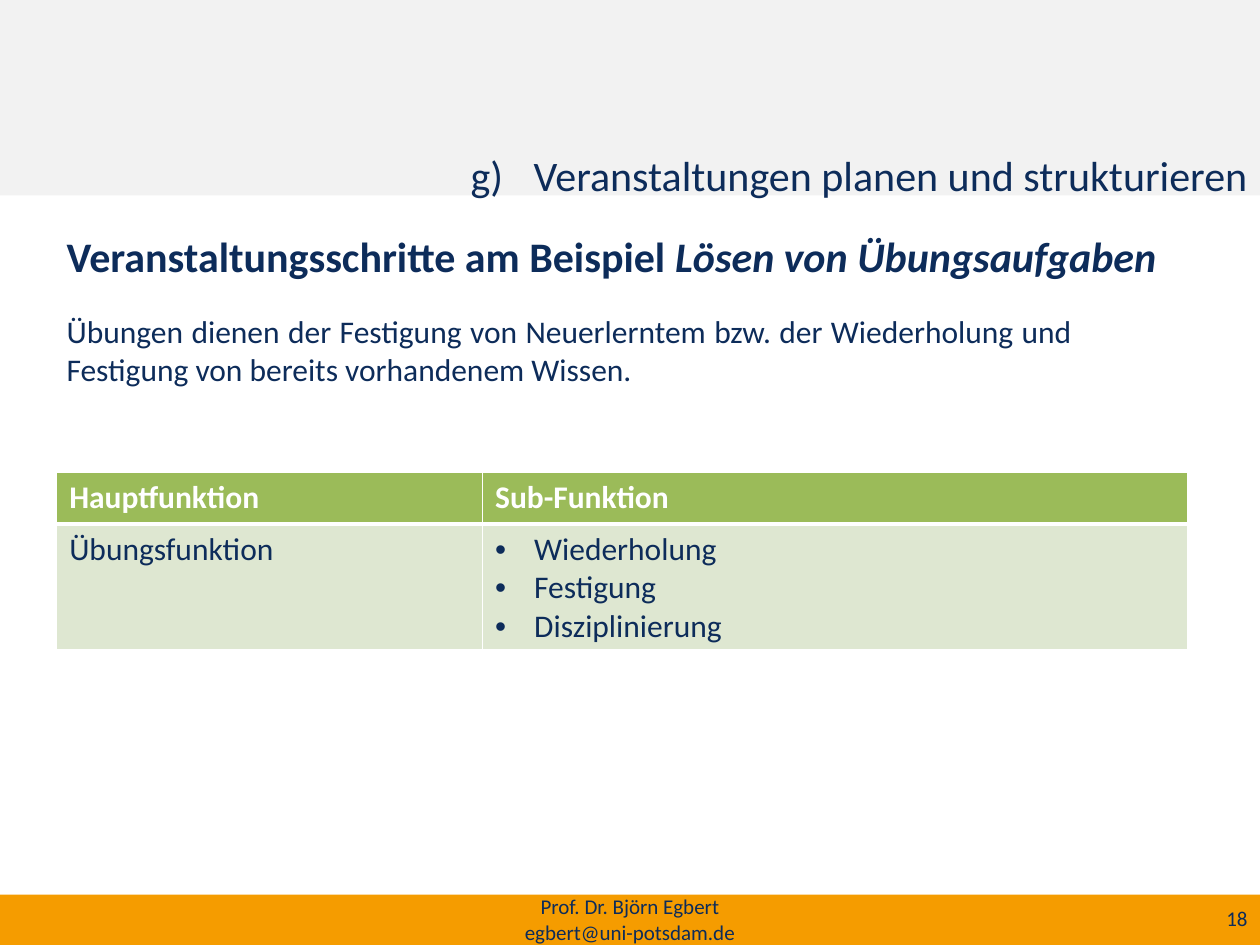
from lxml import etree
from pptx import Presentation
from pptx import util as u
from pptx.dml.color import RGBColor
from pptx.enum import shapes, text
from pptx.oxml.ns import qn

COLORS = {
    "navy": "0D2C5A",
    "white": "FFFFFF",
    "header_band": "F2F2F2",
    "footer_band": "F59C00",
    "table_head": "9BBB59",
    "table_body": "DEE7D1",
}
FONT = "Calibri"
ALIGN = text.PP_ALIGN


def rgb(name):
    return RGBColor.from_string(COLORS[name])


def style_runs(para, size, color="navy", bold=False):
    for span in para.runs:
        span.font.name = FONT
        span.font.size = u.Pt(size)
        span.font.bold = bold
        span.font.color.rgb = rgb(color)


def add_bullet(para, indent, tag, **attributes):
    """Give a paragraph a hanging indent and a bullet or number."""
    properties = para._p.get_or_add_pPr()
    properties.set("marL", str(u.Inches(indent)))
    properties.set("indent", str(-u.Inches(indent)))
    if tag == "a:buChar":
        etree.SubElement(properties, qn("a:buFont"), typeface="Arial")
    etree.SubElement(properties, qn(tag), **attributes)


def add_band(page, top, height, color):
    band = page.shapes.add_shape(
        shapes.MSO_SHAPE.RECTANGLE, 0, u.Inches(top), u.Inches(10), u.Inches(height))
    band.shadow.inherit = False
    band.fill.solid()
    band.fill.fore_color.rgb = rgb(color)
    band.line.fill.background()


def add_text(page, place, words, size, align=ALIGN.LEFT, bold=False,
             anchor=text.MSO_ANCHOR.TOP):
    box = page.shapes.add_textbox(*(u.Inches(length) for length in place))
    frame = box.text_frame
    frame.word_wrap = True
    frame.vertical_anchor = anchor
    para = frame.paragraphs[0]
    para.text = words
    para.alignment = align
    style_runs(para, size, bold=bold)
    return para


def set_borders(cell, widths):
    properties = cell._tc.get_or_add_tcPr()
    for side, width in zip("LRTB", widths):
        line = etree.SubElement(properties, qn(f"a:ln{side}"), w=str(u.Pt(width)))
        fill = etree.SubElement(line, qn("a:solidFill"))
        etree.SubElement(fill, qn("a:srgbClr"), val=COLORS["white"])


def fill_cell(cell, words, is_head, bulleted=False):
    set_borders(cell, (1, 1, 1, 3) if is_head else (1, 1, 3, 1))
    cell.fill.solid()
    cell.fill.fore_color.rgb = rgb("table_head" if is_head else "table_body")
    cell.text_frame.text = words
    for para in cell.text_frame.paragraphs:
        para.alignment = ALIGN.LEFT if is_head else ALIGN.JUSTIFY
        if bulleted:
            add_bullet(para, 0.31, "a:buChar", char="•")
        style_runs(para, 18, "white" if is_head else "navy", is_head)


def add_function_table(page):
    rows = [
        ("Hauptfunktion", "Sub-Funktion"),
        ("Übungsfunktion", "Wiederholung\nFestigung\nDisziplinierung"),
    ]
    table = page.shapes.add_table(
        2, 2, u.Inches(0.45), u.Inches(3.75), u.Inches(8.98), u.Inches(1.41)).table
    for column, width in zip(table.columns, (3.38, 5.6)):
        column.width = u.Inches(width)
    for row, height in zip(table.rows, (0.41, 1)):
        row.height = u.Inches(height)
    for r, row in enumerate(rows):
        for c, words in enumerate(row):
            fill_cell(table.cell(r, c), words, r == 0, bulleted=r == 1 and c == 1)


def main():
    deck = Presentation()
    deck.slide_width, deck.slide_height = u.Inches(10), u.Inches(7.5)
    page = deck.slides.add_slide(deck.slide_layouts[6])

    # Header and footer bands
    add_band(page, 0, 1.55, "header_band")
    add_band(page, 7.1, 0.4, "footer_band")

    # Headline with the example in italics
    headline = add_text(page, (0.43, 1.78, 9.21, 0.55),
                        "Veranstaltungsschritte am Beispiel ", 24, bold=True)
    headline.add_run().text = "Lösen von Übungsaufgaben"
    style_runs(headline, 24, bold=True)
    headline.runs[1].font.italic = True

    # Footer: page number and author
    middle = text.MSO_ANCHOR.MIDDLE
    add_text(page, (7.6, 7.09, 2.4, 0.4), "18", 12, ALIGN.RIGHT, anchor=middle)
    add_text(page, (3.31, 7.09, 3.38, 0.41),
             "Prof. Dr. Björn Egbert\vegbert@uni-potsdam.de", 12, ALIGN.CENTER,
             anchor=middle)

    # Table and introduction
    add_function_table(page)
    add_text(page, (0.43, 2.43, 8.18, 0.71),
             "Übungen dienen der Festigung von Neuerlerntem bzw. der Wiederholung "
             "und Festigung von bereits vorhandenem Wissen.", 18, ALIGN.JUSTIFY)

    # Section title, numbered g)
    section = add_text(page, (1.38, 1.14, 8.62, 0.49),
                       "Veranstaltungen planen und strukturieren", 24, ALIGN.RIGHT)
    add_bullet(section, 0.5, "a:buAutoNum", type="alphaLcParenR", startAt="7")

    deck.save("out.pptx")


if __name__ == "__main__":
    main()
